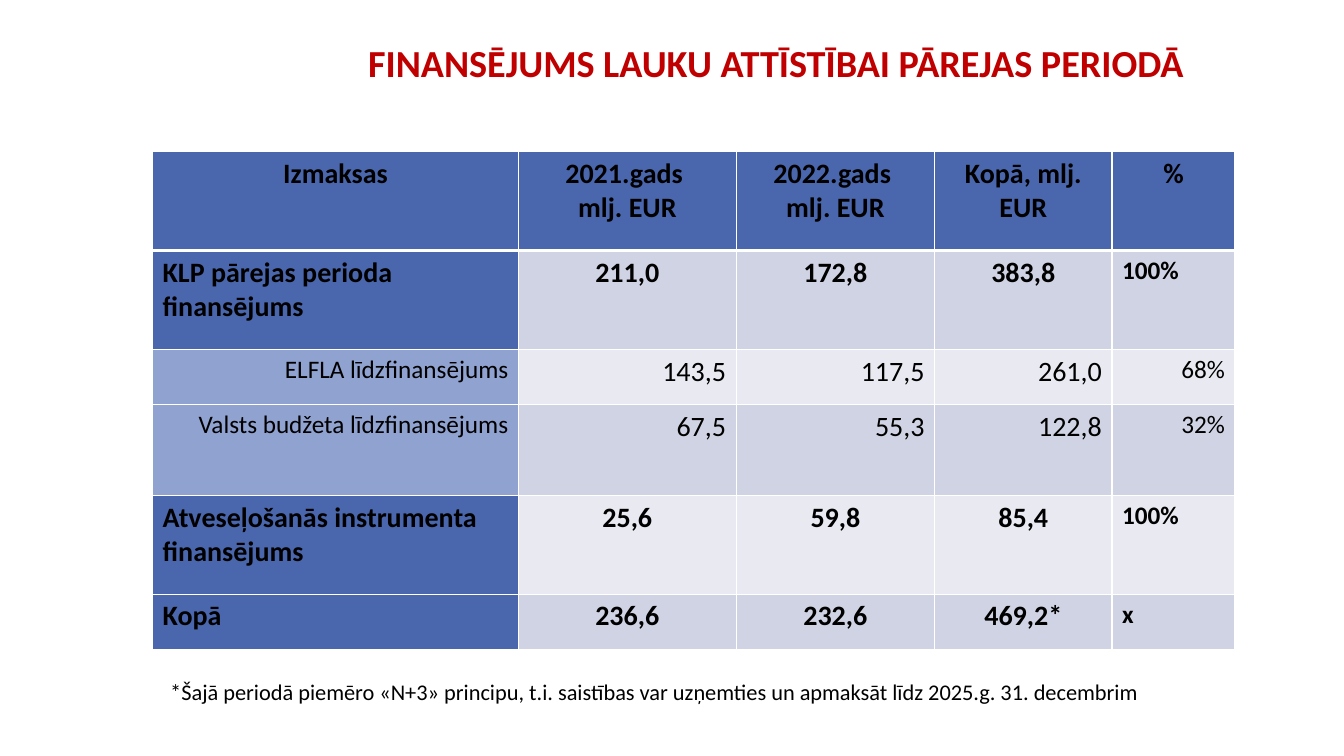
from lxml import etree
from pptx import Presentation
from pptx.dml.color import RGBColor
from pptx.enum import text
from pptx.oxml import ns
from pptx.util import Pt

BLACK = RGBColor(0x00, 0x00, 0x00)
WHITE = RGBColor(0xFF, 0xFF, 0xFF)
RED = RGBColor(0xC0, 0x00, 0x00)
BLUE = RGBColor(0x4A, 0x66, 0xAC)
LIGHT_BLUE = RGBColor(0x90, 0xA2, 0xCF)
BAND_DARK = RGBColor(0xD0, 0xD3, 0xE3)
BAND_LIGHT = RGBColor(0xE9, 0xEA, 0xF1)
LEFT, CENTER, RIGHT = text.PP_ALIGN.LEFT, text.PP_ALIGN.CENTER, text.PP_ALIGN.RIGHT

COLUMN_WIDTHS = [261.4, 155.5, 141.8, 126.7, 87.8]
ROW_HEIGHTS = [70.6, 70.6, 39.6, 64.8, 70.6, 39.6]
DETAIL_ROWS = (2, 3)
ROWS = [
    ["Izmaksas", "2021.gads \nmlj. EUR", "2022.gads \nmlj. EUR", "Kopā, mlj. EUR", "%"],
    ["KLP pārejas perioda finansējums", "211,0", "172,8", "383,8", "100%"],
    ["ELFLA līdzfinansējums", "143,5", "117,5", "261,0", "68%"],
    ["Valsts budžeta līdzfinansējums", "67,5", "55,3", "122,8", "32%"],
    ["Atveseļošanās instrumenta finansējums", "25,6", "59,8", "85,4", "100%"],
    ["Kopā", "236,6", "232,6", "469,2*", "x"],
]


def format_text(frame, size, color, bold, alignment):
    for paragraph in frame.paragraphs:
        paragraph.alignment = alignment
        paragraph.font.name = "Calibri"
        paragraph.font.size = Pt(size)
        paragraph.font.color.rgb = color
        paragraph.font.bold = bold


def add_border(cell, side, width):
    """Draw a white border; side is L, R, T or B. Call before filling the cell."""
    properties = cell._tc.get_or_add_tcPr()
    line = etree.SubElement(properties, ns.qn(f"a:ln{side}"), w=str(Pt(width)))
    fill = etree.SubElement(line, ns.qn("a:solidFill"))
    etree.SubElement(fill, ns.qn("a:srgbClr"), val=str(WHITE))


presentation = Presentation()
presentation.slide_width, presentation.slide_height = Pt(960), Pt(540)
slide = presentation.slides.add_slide(presentation.slide_layouts[5])

title = slide.shapes.title
title.left, title.top, title.width, title.height = Pt(244), Pt(28), Pt(620.6), Pt(93.6)
title.text_frame.text = "FINANSĒJUMS LAUKU ATTĪSTĪBAI PĀREJAS PERIODĀ"
title.text_frame.vertical_anchor = text.MSO_ANCHOR.TOP
title.text_frame.auto_size = text.MSO_AUTO_SIZE.NONE
title.text_frame.paragraphs[0].line_spacing = 0.9
format_text(title.text_frame, 27.3, RED, True, CENTER)

table = slide.shapes.add_table(
    len(ROWS), len(COLUMN_WIDTHS), Pt(109), Pt(108.3),
    Pt(sum(COLUMN_WIDTHS)), Pt(sum(ROW_HEIGHTS))).table
for column, width in zip(table.columns, COLUMN_WIDTHS):
    column.width = Pt(width)
for row, height in zip(table.rows, ROW_HEIGHTS):
    row.height = Pt(height)

for row_index, values in enumerate(ROWS):
    is_header = row_index == 0
    is_detail = row_index in DETAIL_ROWS
    for column_index, value in enumerate(values):
        is_label = column_index == 0
        is_percent = column_index == len(values) - 1

        if is_header or is_label:
            color = LIGHT_BLUE if is_detail else BLUE
        else:
            color = BAND_DARK if row_index % 2 else BAND_LIGHT

        if is_detail:
            alignment = RIGHT
        elif not is_header and (is_label or is_percent):
            alignment = LEFT
        else:
            alignment = CENTER

        is_small = (is_percent and not is_header) or (is_label and is_detail)
        cell = table.cell(row_index, column_index)
        cell.text = value
        format_text(cell.text_frame, 18 if is_small else 20, BLACK, not is_detail, alignment)
        for side in "LRTB":
            is_header_edge = (row_index, side) in ((0, "B"), (1, "T"))
            add_border(cell, side, 3 if is_header_edge else 1)
        cell.fill.solid()
        cell.fill.fore_color.rgb = color

footnote = slide.shapes.add_textbox(Pt(114.5), Pt(481), Pt(725.8), Pt(26.6))
footnote.text_frame.word_wrap = True
footnote.text_frame.auto_size = text.MSO_AUTO_SIZE.SHAPE_TO_FIT_TEXT
footnote.text_frame.text = (
    "*Šajā periodā piemēro «N+3» principu, t.i. saistības var uzņemties "
    "un apmaksāt līdz 2025.g. 31. decembrim")
format_text(footnote.text_frame, 16, BLACK, False, LEFT)

presentation.save("out.pptx")
